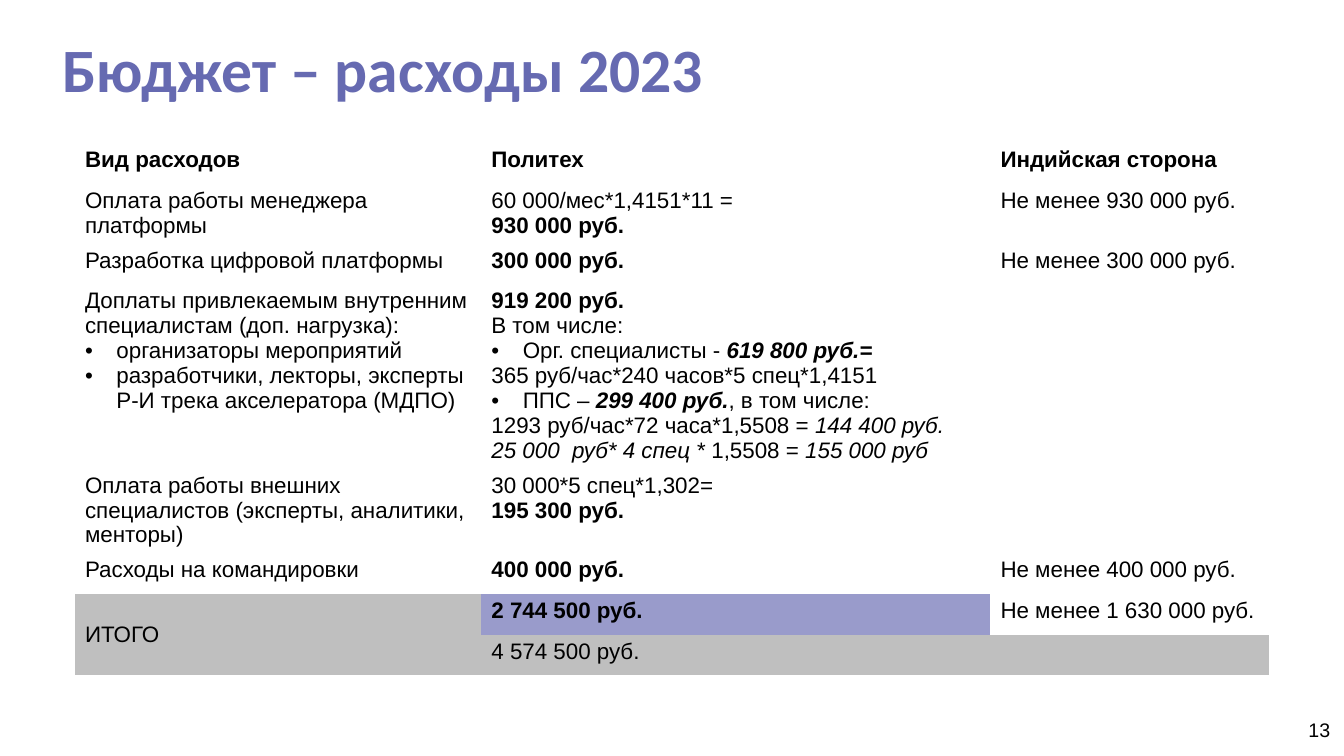
from dataclasses import dataclass

from lxml.etree import SubElement
from pptx import Presentation
from pptx.dml.color import RGBColor
from pptx.enum.text import MSO_ANCHOR as Anchor, MSO_AUTO_SIZE as AutoSize, PP_ALIGN as Align
from pptx.oxml.ns import qn
from pptx.util import Cm, Pt

BLACK = RGBColor(0x00, 0x00, 0x00)
VIOLET = RGBColor(0x66, 0x6A, 0xB1)
LILAC = RGBColor(0x99, 0x9B, 0xCB)
GREY = RGBColor(0xBF, 0xBF, 0xBF)

NO_STYLE_NO_GRID = "{2D5ABB26-0587-4C30-8999-92F81FD0307C}"
COLUMN_WIDTHS = (10.24, 12.83, 7.01)
ROW_HEIGHT = 1.03
BULLET_INDENT = Cm(0.79)


@dataclass(frozen=True)
class Span:
    text: str
    bold: bool = False
    italic: bool = False


@dataclass(frozen=True)
class Line:
    spans: tuple[Span, ...]
    bullet: bool = False


@dataclass(frozen=True)
class Label:
    text: str
    left: float
    top: float
    width: float
    height: float
    font: str
    size: int
    color: RGBColor
    bold: bool = False
    align: Align = Align.LEFT
    anchor: Anchor = Anchor.TOP
    line_spacing: float = 1.0
    auto_size: AutoSize = AutoSize.NONE


def plain(text: str) -> Line:
    return Line((Span(text),))


def strong(text: str) -> Line:
    return Line((Span(text, bold=True),))


def bullet(*spans: Span) -> Line:
    return Line(spans, bullet=True)


# Table content: rows of cells, each cell a list of lines
BUDGET: list[list[list[Line]]] = [
    [[strong("Вид расходов")], [strong("Политех")], [strong("Индийская сторона")]],
    [
        [plain("Оплата работы менеджера платформы")],
        [plain("60 000/мес*1,4151*11 ="), strong("930 000 руб.")],
        [plain("Не менее 930 000 руб.")],
    ],
    [
        [plain("Разработка цифровой платформы")],
        [strong("300 000 руб.")],
        [plain("Не менее 300 000 руб.")],
    ],
    [
        [
            plain("Доплаты привлекаемым внутренним специалистам (доп. нагрузка):"),
            bullet(Span("организаторы мероприятий")),
            bullet(Span("разработчики, лекторы, эксперты Р-И трека акселератора (МДПО)")),
        ],
        [
            strong("919 200 руб."),
            plain("В том числе:"),
            bullet(Span("Орг. специалисты - "), Span("619 800 руб.=", bold=True, italic=True)),
            plain("365 руб/час*240 часов*5 спец*1,4151"),
            bullet(
                Span("ППС – "),
                Span("299 400 руб.", bold=True, italic=True),
                Span(", в том числе:"),
            ),
            Line((Span("1293 руб/час*72 часа*1,5508 = "), Span("144 400 руб.", italic=True))),
            Line((
                Span("25 000  руб* 4 спец * ", italic=True),
                Span("1,5508 = "),
                Span("155 000 руб", italic=True),
            )),
        ],
        [],
    ],
    [
        [plain("Оплата работы внешних специалистов (эксперты, аналитики, менторы)")],
        [plain("30 000*5 спец*1,302="), strong("195 300 руб.")],
        [],
    ],
    [
        [plain("Расходы на командировки")],
        [strong("400 000 руб.")],
        [plain("Не менее 400 000 руб.")],
    ],
    [[plain("ИТОГО")], [strong("2 744 500 руб.")], [plain("Не менее 1 630 000 руб.")]],
    [[], [plain("4 574 500 руб.")], []],
]
TOTAL_ROW = len(BUDGET) - 2
GRAND_TOTAL_ROW = len(BUDGET) - 1
CELL_FILLS = {(TOTAL_ROW, 0): GREY, (TOTAL_ROW, 1): LILAC, (GRAND_TOTAL_ROW, 1): GREY}

LABELS = [
    Label("Бюджет – расходы 2023", 1.32, 0, 29.21, 3.68, "Calibri", 44, VIOLET,
          bold=True, anchor=Anchor.MIDDLE, line_spacing=0.9),
    Label("13", 32.13, 17.96, 2.24, 0.86, "Arial", 14, BLACK,
          align=Align.CENTER, auto_size=AutoSize.SHAPE_TO_FIT_TEXT),
]


def add_run(paragraph, span: Span, font_name: str, size: int, color: RGBColor) -> None:
    run = paragraph.add_run()
    run.text = span.text
    font = run.font
    font.name, font.size = font_name, Pt(size)
    font.bold, font.italic = span.bold, span.italic
    font.color.rgb = color


def add_bullet(paragraph) -> None:
    properties = paragraph._p.get_or_add_pPr()
    properties.set("marL", str(BULLET_INDENT))
    properties.set("indent", str(-BULLET_INDENT))
    SubElement(properties, qn("a:buFont")).set("typeface", "Arial")
    SubElement(properties, qn("a:buChar")).set("char", "•")


def fill_cell(cell, lines: list[Line]) -> None:
    frame = cell.text_frame
    for index, line in enumerate(lines):
        paragraph = frame.add_paragraph() if index else frame.paragraphs[0]
        if line.bullet:
            add_bullet(paragraph)
        for span in line.spans:
            add_run(paragraph, span, "Arial", 16, BLACK)


def add_budget_table(slide) -> None:
    row_count = len(BUDGET)
    shape = slide.shapes.add_table(
        row_count, len(COLUMN_WIDTHS), Cm(1.89), Cm(3.58),
        Cm(sum(COLUMN_WIDTHS)), Cm(ROW_HEIGHT * row_count),
    )
    table = shape.table
    table.first_row = table.horz_banding = False
    table._tbl.tblPr.find(qn("a:tableStyleId")).text = NO_STYLE_NO_GRID
    for column, width in zip(table.columns, COLUMN_WIDTHS):
        column.width = Cm(width)

    # Merged total cells
    table.cell(TOTAL_ROW, 0).merge(table.cell(GRAND_TOTAL_ROW, 0))
    table.cell(GRAND_TOTAL_ROW, 1).merge(table.cell(GRAND_TOTAL_ROW, 2))
    table.cell(TOTAL_ROW, 0).vertical_anchor = Anchor.MIDDLE

    for row_index, row in enumerate(BUDGET):
        table.rows[row_index].height = Cm(ROW_HEIGHT)
        for column_index, lines in enumerate(row):
            cell = table.cell(row_index, column_index)
            fill_cell(cell, lines)
            color = CELL_FILLS.get((row_index, column_index))
            if color is None:
                cell.fill.background()
            else:
                cell.fill.solid()
                cell.fill.fore_color.rgb = color


def add_label(slide, label: Label) -> None:
    shape = slide.shapes.add_textbox(
        Cm(label.left), Cm(label.top), Cm(label.width), Cm(label.height)
    )
    frame = shape.text_frame
    frame.word_wrap = True
    frame.auto_size = label.auto_size
    frame.vertical_anchor = label.anchor
    paragraph = frame.paragraphs[0]
    paragraph.alignment = label.align
    paragraph.line_spacing = label.line_spacing
    add_run(paragraph, Span(label.text, label.bold), label.font, label.size, label.color)


def main() -> None:
    presentation = Presentation()
    presentation.slide_width, presentation.slide_height = Cm(33.87), Cm(19.05)
    slide = presentation.slides.add_slide(presentation.slide_layouts[6])
    add_budget_table(slide)
    for label in LABELS:
        add_label(slide, label)
    presentation.save("out.pptx")


if __name__ == "__main__":
    main()
